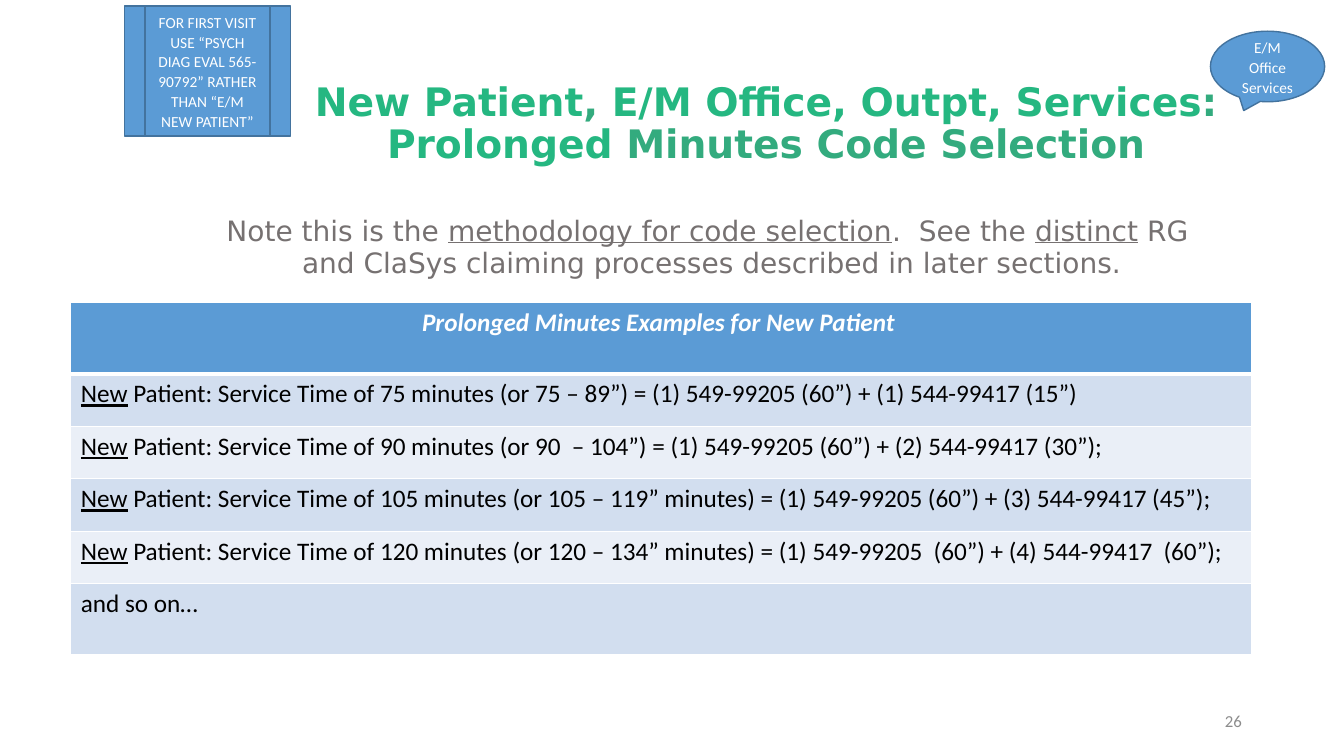
import pptx
import pptx.dml.color
import pptx.enum.shapes
import pptx.enum.text
import pptx.oxml
import pptx.oxml.ns
import pptx.util

Pt = pptx.util.Pt
RGBColor = pptx.dml.color.RGBColor
SHAPE = pptx.enum.shapes.MSO_SHAPE
ALIGN = pptx.enum.text.PP_ALIGN
ANCHOR = pptx.enum.text.MSO_ANCHOR

WHITE = RGBColor(0xFF, 0xFF, 0xFF)
BLACK = RGBColor(0, 0, 0)
BLUE = RGBColor(0x5B, 0x9B, 0xD5)
DARK_BLUE = RGBColor(0x43, 0x73, 0x9E)
BAND_DARK = RGBColor(0xD2, 0xDE, 0xEF)
BAND_LIGHT = RGBColor(0xEA, 0xEF, 0xF7)
GREEN = RGBColor(0x25, 0xB7, 0x81)
MUTED_GREEN = RGBColor(0x33, 0xAB, 0x7E)
GRAY = RGBColor(0x76, 0x71, 0x71)
PALE_GRAY = RGBColor(0x8C, 0x8C, 0x8C)

HEADING_FONT = "DejaVu Sans"
BODY_FONT = "Calibri"


def write_text(frame, paragraphs, size, color, font=BODY_FONT, align=ALIGN.LEFT,
               line_spacing=None, space_before=0, bold=False, italic=False):
    """Fill a frame; each paragraph is a list of (text, font overrides) runs."""
    for index, runs in enumerate(paragraphs):
        paragraph = frame.paragraphs[0] if index == 0 else frame.add_paragraph()
        paragraph.alignment = align
        if line_spacing:
            paragraph.line_spacing = line_spacing
        if index and space_before:
            paragraph.space_before = Pt(space_before)
        for text, overrides in runs:
            run = paragraph.add_run()
            run.text = text
            run.font.name = font
            run.font.size = Pt(size)
            run.font.bold = bold
            run.font.italic = italic
            run.font.underline = overrides.get("underline", False)
            run.font.color.rgb = overrides.get("color", color)


def set_border(cell, side, width):
    properties = cell._tc.get_or_add_tcPr()
    properties.append(pptx.oxml.parse_xml(
        f'<a:{side} {pptx.oxml.ns.nsdecls("a")} w="{Pt(width)}"><a:solidFill>'
        f'<a:srgbClr val="{WHITE}"/></a:solidFill></a:{side}>'))


class SlideBuilder:
    def __init__(self, slide):
        self.slide = slide

    def text_box(self, box, paragraphs, anchor=ANCHOR.TOP, **text_format):
        shape = self.slide.shapes.add_textbox(*map(Pt, box))
        frame = shape.text_frame
        frame.word_wrap = True
        frame.vertical_anchor = anchor
        write_text(frame, paragraphs, **text_format)

    def note_shape(self, kind, box, text):
        shape = self.slide.shapes.add_shape(kind, *map(Pt, box))
        shape.shadow.inherit = False
        shape.fill.solid()
        shape.fill.fore_color.rgb = BLUE
        shape.line.color.rgb = DARK_BLUE
        shape.line.width = Pt(1)
        shape.text_frame.word_wrap = True
        shape.text_frame.vertical_anchor = ANCHOR.MIDDLE
        write_text(shape.text_frame, [[(text, {})]], size=11, color=WHITE,
                   align=ALIGN.CENTER, line_spacing=1.07)

    def example_table(self, box, heights, header, rows):
        table = self.slide.shapes.add_table(len(heights), 1, *map(Pt, box)).table
        for index, height in enumerate(heights):
            table.rows[index].height = Pt(height)
            cell = table.cell(index, 0)
            is_header = index == 0
            for side in ("lnL", "lnR", "lnT", "lnB"):
                meets_header = (is_header and side == "lnB") or (index == 1 and side == "lnT")
                set_border(cell, side, 3 if meets_header else 1)
            cell.fill.solid()
            if is_header:
                cell.fill.fore_color.rgb = BLUE
                write_text(cell.text_frame, [[(header, {})]], size=18, color=WHITE,
                           align=ALIGN.CENTER, bold=True, italic=True)
            else:
                cell.fill.fore_color.rgb = BAND_DARK if index % 2 else BAND_LIGHT
                write_text(cell.text_frame, [rows[index - 1]], size=18, color=BLACK)


def main():
    presentation = pptx.Presentation()
    presentation.slide_width = Pt(960)
    presentation.slide_height = Pt(540)
    builder = SlideBuilder(presentation.slides.add_slide(presentation.slide_layouts[6]))

    muted = {"color": MUTED_GREEN}
    underlined = {"underline": True}

    builder.text_box(
        (200.2, 55.4, 694, 98.6),
        [[("New Patient", {}), (", ", muted), ("E/M Office, Outpt, Services", {}), (":", muted)],
         [("Prolonged", {}), (" Minutes Code Selection", muted)]],
        size=28, color=GREEN, font=HEADING_FONT, align=ALIGN.CENTER,
        line_spacing=0.9, bold=True)
    builder.text_box(
        (147, 154.8, 723, 51.8),
        [[("Note this is the ", {}), ("methodology for code selection", underlined),
          (".  See the ", {}), ("distinct", underlined), (" RG ", {})],
         [("and ClaSys claiming processes described in later sections.", {})]],
        size=20, color=GRAY, font=HEADING_FONT, align=ALIGN.CENTER,
        line_spacing=Pt(18), space_before=5)
    builder.text_box((678.2, 500.4, 216, 28.8), [[("26", {})]], anchor=ANCHOR.MIDDLE,
                     size=12, color=PALE_GRAY, align=ALIGN.RIGHT)

    examples = [
        "75 minutes (or 75 – 89”) = (1) 549-99205 (60”) + (1) 544-99417 (15”)",
        "90 minutes (or 90  – 104”) = (1) 549-99205 (60”) + (2) 544-99417 (30”);",
        "105 minutes (or 105 – 119” minutes) = (1) 549-99205 (60”) + (3) 544-99417 (45”);",
        "120 minutes (or 120 – 134” minutes) = (1) 549-99205  (60”) + (4) 544-99417  (60”);",
    ]
    rows = [[("New", underlined), (" Patient: Service Time of " + example, {})]
            for example in examples]
    rows.append([("and so on…", {})])
    builder.example_table((50.6, 216, 843.6, 251.4), [51] + [37.5] * 4 + [51],
                          "Prolonged Minutes Examples for New Patient ", rows)

    builder.note_shape(SHAPE.OVAL_CALLOUT, (864.6, 22.3, 81.6, 50.4), "E/M Office Services")
    builder.note_shape(
        SHAPE.FLOWCHART_PREDEFINED_PROCESS, (88.8, 4.2, 118.8, 93),
        "FOR FIRST VISIT USE “PSYCH DIAG EVAL 565-90792” RATHER THAN “E/M NEW PATIENT”")
    presentation.save("out.pptx")


if __name__ == "__main__":
    main()
